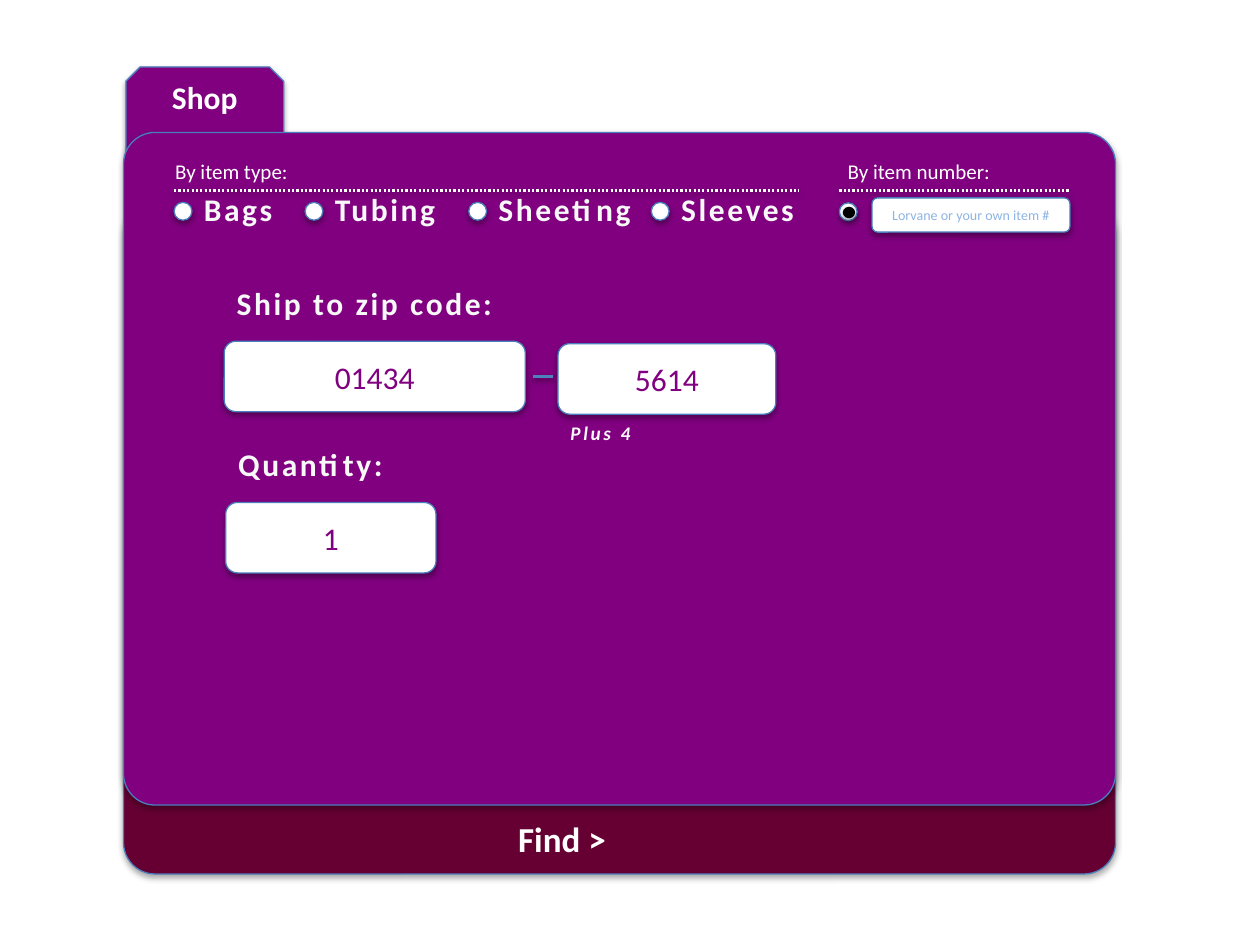
import lxml.etree
import pptx
import pptx.dml.color
import pptx.enum.dml
import pptx.enum.shapes
import pptx.enum.text
import pptx.oxml.ns
import pptx.util
from pptx.util import Cm, Pt

RGBColor = pptx.dml.color.RGBColor
WHITE = RGBColor(0xFF, 0xFF, 0xFF)
OFF_WHITE = RGBColor(0xF8, 0xF8, 0xF8)
BLACK = RGBColor(0, 0, 0)
PURPLE = RGBColor(0x80, 0x00, 0x80)
MAROON = RGBColor(0x66, 0x00, 0x33)
OUTLINE_BLUE = RGBColor(0x4B, 0x7E, 0xBC)
DASH_BLUE = RGBColor(0x4F, 0x81, 0xBD)
HINT_BLUE = RGBColor(0x8E, 0xB4, 0xE3)

SHAPE = pptx.enum.shapes.MSO_SHAPE
CENTER = pptx.enum.text.PP_ALIGN.CENTER
LEFT = pptx.enum.text.PP_ALIGN.LEFT
DOTTED = pptx.enum.dml.MSO_LINE.ROUND_DOT
FONT = "Calibri"
RADIO_SIZE = 0.36


def cast_shadow(properties, opacity, distance):
    """Give a shape or connector a soft shadow straight below it."""
    qn = pptx.oxml.ns.qn
    effects = properties.find(qn("a:effectLst"))
    if effects is None:
        effects = lxml.etree.SubElement(properties, qn("a:effectLst"))
    shadow = lxml.etree.SubElement(
        effects, qn("a:outerShdw"), blurRad=str(Pt(3.15)),
        dist=str(Pt(distance)), dir="5400000", rotWithShape="0")
    color = lxml.etree.SubElement(shadow, qn("a:srgbClr"), val="000000")
    lxml.etree.SubElement(color, qn("a:alpha"), val=str(opacity * 1000))


def add_box(kind, left, top, width, height, fill=WHITE,
            text="", size=18, color=PURPLE, bold=False):
    """Add an outlined, shadowed shape; lengths are in centimetres."""
    shape = slide.shapes.add_shape(kind, Cm(left), Cm(top), Cm(width), Cm(height))
    shape.fill.solid()
    shape.fill.fore_color.rgb = fill
    shape.line.color.rgb = OUTLINE_BLUE
    shape.line.width = Pt(0.75)
    shape.shadow.inherit = False
    cast_shadow(shape._element.spPr, 35, 1.8)
    if text:
        paragraph = shape.text_frame.paragraphs[0]
        paragraph.text = text
        paragraph.alignment = CENTER
        paragraph.font.name = FONT
        paragraph.font.size = Pt(size)
        paragraph.font.bold = bold
        paragraph.font.color.rgb = color
    return shape


presentation = pptx.Presentation()
presentation.slide_width = Cm(25.4)
presentation.slide_height = Cm(19.05)
slide = presentation.slides.add_slide(presentation.slide_layouts[6])

# Card: the find bar behind, the tab, and the main panel in front
find_bar = add_box(SHAPE.ROUNDED_RECTANGLE, 2.49, 4.06, 20, 13.56, MAROON)
tab = add_box(SHAPE.SNIP_2_SAME_RECTANGLE, 2.54, 1.35, 3.18, 1.73, PURPLE,
              "Shop", 18, WHITE, True)
tab.text_frame.margin_top = 0
tab.text_frame.margin_bottom = Cm(0.66)
panel = add_box(SHAPE.ROUNDED_RECTANGLE, 2.49, 2.67, 20, 13.56, PURPLE)
for card in (find_bar, panel):
    card.adjustments[0] = 0.047

# Labels: text, left, top, width, height, size, colour, bold, italic, spacing, alignment
labels = [
    ("Find >", 9.02, 16.36, 4.62, 1.12, 20, WHITE, True, False, 0, CENTER),
    ("By item type:", 3.28, 3.07, 7.29, 0.76, 12, WHITE, False, False, 0, LEFT),
    ("By item number:", 16.84, 3.07, 7.29, 0.76, 12, WHITE, False, False, 0, LEFT),
    ("Ship to zip code:", 4.52, 5.61, 6.53, 1.02, 18, OFF_WHITE, True, False, 1.5, LEFT),
    ("Plus 4", 11.25, 8.36, 6.53, 0.74, 11, OFF_WHITE, True, True, 1.5, LEFT),
    ("Quantity:", 4.55, 8.84, 6.53, 1.02, 18, OFF_WHITE, True, False, 1.5, LEFT),
]

# Item types: a radio button with its label
for name, left in (("Bags", 3.51), ("Tubing", 6.15), ("Sheeting", 9.45), ("Sleeves", 13.13)):
    add_box(SHAPE.OVAL, left, 4.08, RADIO_SIZE, RADIO_SIZE)
    labels.append((name, left + 0.35, 3.7, 4.11, 1.02, 18, OFF_WHITE, True, False, 1.5, LEFT))

# Item number: the selected radio button and its field
add_box(SHAPE.OVAL, 16.92, 4.09, RADIO_SIZE, RADIO_SIZE)
selected_dot = add_box(SHAPE.OVAL, 16.99, 4.17, 0.25, 0.23, BLACK)
selected_dot.line.fill.background()
add_box(SHAPE.ROUNDED_RECTANGLE, 17.58, 3.99, 3.99, 0.69,
        text="Lorvane or your own item #", size=8, color=HINT_BLUE)

# Entry fields
for value, left, top, width in (("01434", 4.52, 6.88, 6.07),
                                ("5614", 11.25, 6.93, 4.39),
                                ("1", 4.55, 10.13, 4.24)):
    add_box(SHAPE.ROUNDED_RECTANGLE, left, top, width, 1.42, text=value)

# Dotted rules and the dash between the zip fields
for start, end, y, color, weight, dash in ((3.51, 16.1, 3.84, WHITE, 1.25, DOTTED),
                                           (16.92, 21.56, 3.84, WHITE, 1.25, DOTTED),
                                           (10.74, 11.15, 7.59, DASH_BLUE, 2, None)):
    rule = slide.shapes.add_connector(
        pptx.enum.shapes.MSO_CONNECTOR.STRAIGHT, Cm(start), Cm(y), Cm(end), Cm(y))
    rule.line.color.rgb = color
    rule.line.width = Pt(weight)
    rule.line.dash_style = dash
    cast_shadow(rule._element.spPr, 38, 1.6)

for text, left, top, width, height, size, color, bold, italic, spacing, alignment in labels:
    text_box = slide.shapes.add_textbox(Cm(left), Cm(top), Cm(width), Cm(height))
    text_box.text_frame.word_wrap = True
    paragraph = text_box.text_frame.paragraphs[0]
    paragraph.alignment = alignment
    run = paragraph.add_run()
    run.text = text
    paragraph.font.name = FONT
    paragraph.font.size = Pt(size)
    paragraph.font.bold = bold
    paragraph.font.italic = italic
    paragraph.font.color.rgb = color
    if spacing:
        run._r.get_or_add_rPr().set("spc", str(int(spacing * 100)))

presentation.save("out.pptx")
